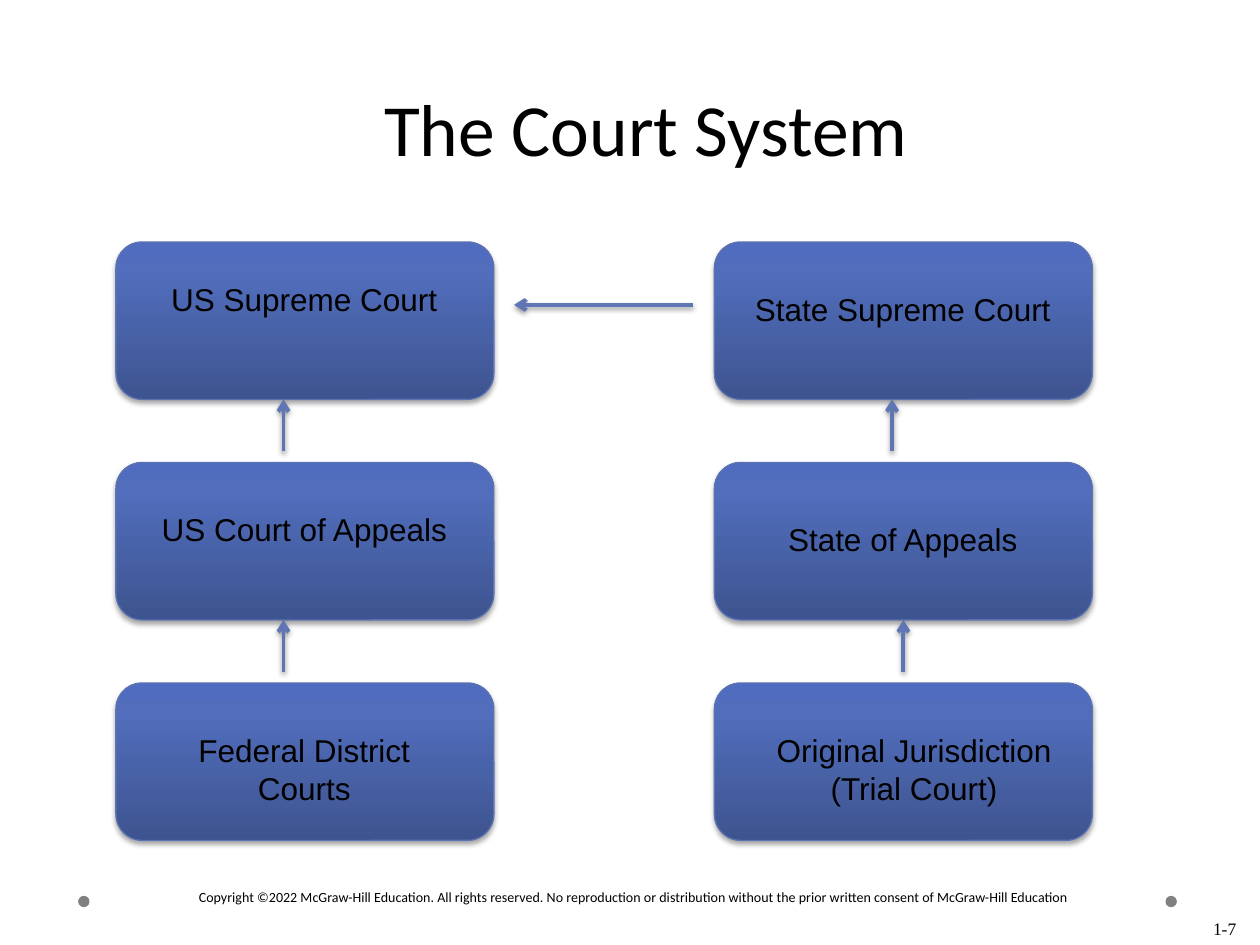
from typing import NamedTuple

from pptx import Presentation
from pptx.dml.color import RGBColor
from pptx.enum.shapes import MSO_CONNECTOR, MSO_SHAPE
from pptx.enum.text import MSO_ANCHOR, MSO_AUTO_SIZE, PP_ALIGN
from pptx.oxml import parse_xml
from pptx.oxml.ns import nsdecls, qn
from pptx.util import Inches, Pt

BLACK = RGBColor(0x00, 0x00, 0x00)
GREY = RGBColor(0x80, 0x80, 0x80)
BOX_EDGE = RGBColor(0x5C, 0x72, 0xB2)
ARROW_BLUE = RGBColor(0x60, 0x76, 0xB4)
BOX_GRADIENT = ((0, RGBColor(0x3E, 0x54, 0x90)),
                (80, RGBColor(0x51, 0x6D, 0xBB)),
                (100, RGBColor(0x4F, 0x6C, 0xBE)))

BOX_WIDTH, BOX_HEIGHT = 3, 1.25
FEDERAL_LEFT, STATE_LEFT = 0.92, 5.67
FIRST_TOP, ROW_STEP = 1.92, 1.75
LABEL_WIDTH = 2.67


class Court(NamedTuple):
    name: str
    left: float
    row: int
    label_left: float
    label_top: float
    label_height: float = 0.4


class Appeal(NamedTuple):
    start: tuple[float, float]
    end: tuple[float, float]


COURTS = (
    Court("US Supreme Court", FEDERAL_LEFT, 0, 1.08, 2.17),
    Court("US Court of Appeals", FEDERAL_LEFT, 1, 1.08, 4),
    Court("Federal District Courts", FEDERAL_LEFT, 2, 1.08, 5.75, 0.71),
    Court("State Supreme Court", STATE_LEFT, 0, 5.83, 2.25),
    Court("State of Appeals", STATE_LEFT, 1, 5.83, 4.08),
    Court("Original Jurisdiction\n(Trial Court)", STATE_LEFT, 2, 5.92, 5.75, 0.71),
)
APPEALS = (
    Appeal((2.25, 5.33), (2.25, 4.92)),
    Appeal((2.25, 3.58), (2.25, 3.17)),
    Appeal((7.17, 5.33), (7.17, 4.92)),
    Appeal((7.08, 3.58), (7.08, 3.17)),
    Appeal((5.5, 2.42), (4.08, 2.42)),
)


def add_shadow(shape, opacity: int, distance: float) -> None:
    """Cast a soft black shadow straight down."""
    shape._element.spPr.append(parse_xml(
        f'<a:effectLst {nsdecls("a")}><a:outerShdw blurRad="{Pt(3.1)}" '
        f'dist="{Pt(distance)}" dir="5400000" rotWithShape="0">'
        f'<a:srgbClr val="000000"><a:alpha val="{opacity * 1000}"/></a:srgbClr>'
        '</a:outerShdw></a:effectLst>'))


def add_text(slide, text: str, left: float, top: float, width: float, height: float,
             font: str, size: float, align=PP_ALIGN.LEFT, anchor=MSO_ANCHOR.TOP):
    box = slide.shapes.add_textbox(Inches(left), Inches(top), Inches(width), Inches(height))
    frame = box.text_frame
    frame.word_wrap = True
    frame.vertical_anchor = anchor
    frame.text = text
    for paragraph in frame.paragraphs:
        paragraph.alignment = align
        for run in paragraph.runs:
            run.font.name = font
            run.font.size = Pt(size)
            run.font.color.rgb = BLACK
    return frame


def add_dot(slide, left: float) -> None:
    dot = slide.shapes.add_shape(MSO_SHAPE.OVAL, Inches(left), Inches(7.11),
                                 Inches(0.09), Inches(0.09))
    dot.shadow.inherit = False
    dot.fill.solid()
    dot.fill.fore_color.rgb = GREY
    dot.line.fill.background()


def add_court_box(slide, court: Court) -> None:
    box = slide.shapes.add_shape(
        MSO_SHAPE.ROUNDED_RECTANGLE, Inches(court.left),
        Inches(FIRST_TOP + court.row * ROW_STEP), Inches(BOX_WIDTH), Inches(BOX_HEIGHT))
    box.line.color.rgb = BOX_EDGE
    box.line.width = Pt(0.75)
    stops = "".join(f'<a:gs pos="{pos * 1000}"><a:srgbClr val="{color}"/></a:gs>'
                    for pos, color in BOX_GRADIENT)
    box._element.spPr.find(qn("a:prstGeom")).addnext(parse_xml(
        f'<a:gradFill {nsdecls("a")} rotWithShape="1"><a:gsLst>{stops}</a:gsLst>'
        '<a:lin ang="16200000" scaled="0"/></a:gradFill>'))
    add_shadow(box, 35, 1.8)


def add_court_label(slide, court: Court) -> None:
    label = add_text(slide, court.name, court.label_left, court.label_top, LABEL_WIDTH,
                     court.label_height, "Arial", 18, PP_ALIGN.CENTER)
    label.auto_size = MSO_AUTO_SIZE.SHAPE_TO_FIT_TEXT


def add_appeal_arrow(slide, appeal: Appeal) -> None:
    points = [Inches(value) for value in appeal.start + appeal.end]
    arrow = slide.shapes.add_connector(MSO_CONNECTOR.STRAIGHT, *points)
    arrow.line.color.rgb = ARROW_BLUE
    arrow.line.width = Pt(2.25)
    arrow._element.spPr.find(qn("a:ln")).append(
        parse_xml(f'<a:tailEnd {nsdecls("a")} type="arrow"/>'))
    add_shadow(arrow, 38, 1.6)


def main() -> None:
    prs = Presentation()
    prs.slide_width, prs.slide_height = Inches(10), Inches(7.5)
    slide = prs.slides.add_slide(prs.slide_layouts[6])

    # Footer
    for left in (9.25, 0.62):
        add_dot(slide, left)
    add_text(slide, "1-7", 7.58, 7, 2.33, 0.5, "Times New Roman", 10,
             PP_ALIGN.RIGHT, MSO_ANCHOR.BOTTOM)
    add_text(slide, "Copyright ©2022 McGraw-Hill Education. All rights reserved. "
             "No reproduction or distribution without the prior written consent of "
             "McGraw-Hill Education", 1.48, 7, 7.77, 0.22, "Calibri", 8)

    # Title
    title = add_text(slide, "The Court System", 0.5, 0.33, 9.25, 1.08, "Calibri", 42,
                     PP_ALIGN.CENTER, MSO_ANCHOR.BOTTOM)
    title.paragraphs[0].line_spacing = Pt(58)

    # Court hierarchy
    for court in COURTS:
        add_court_box(slide, court)
    for court in COURTS:
        add_court_label(slide, court)
    for appeal in APPEALS:
        add_appeal_arrow(slide, appeal)

    prs.save("out.pptx")


if __name__ == "__main__":
    main()
